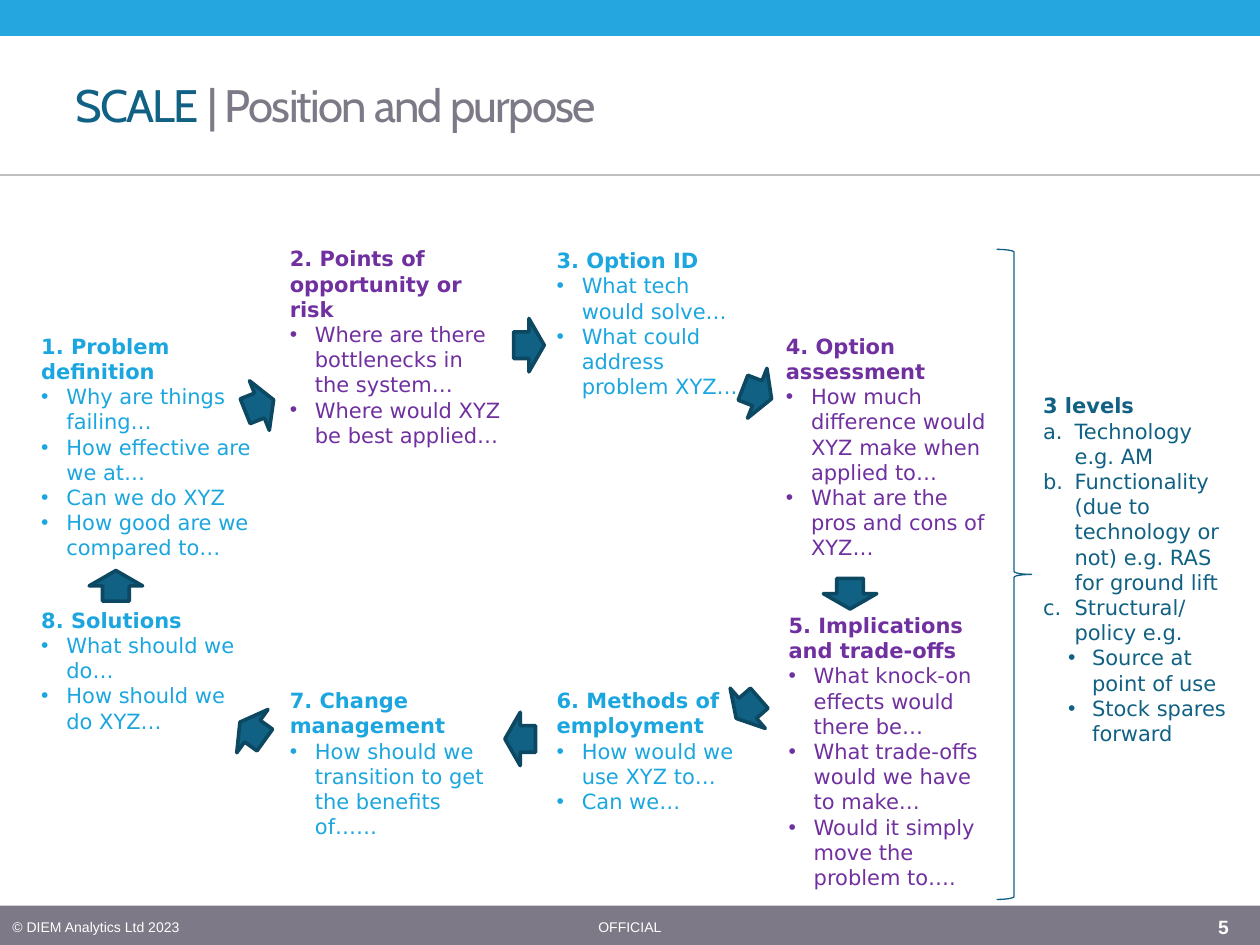
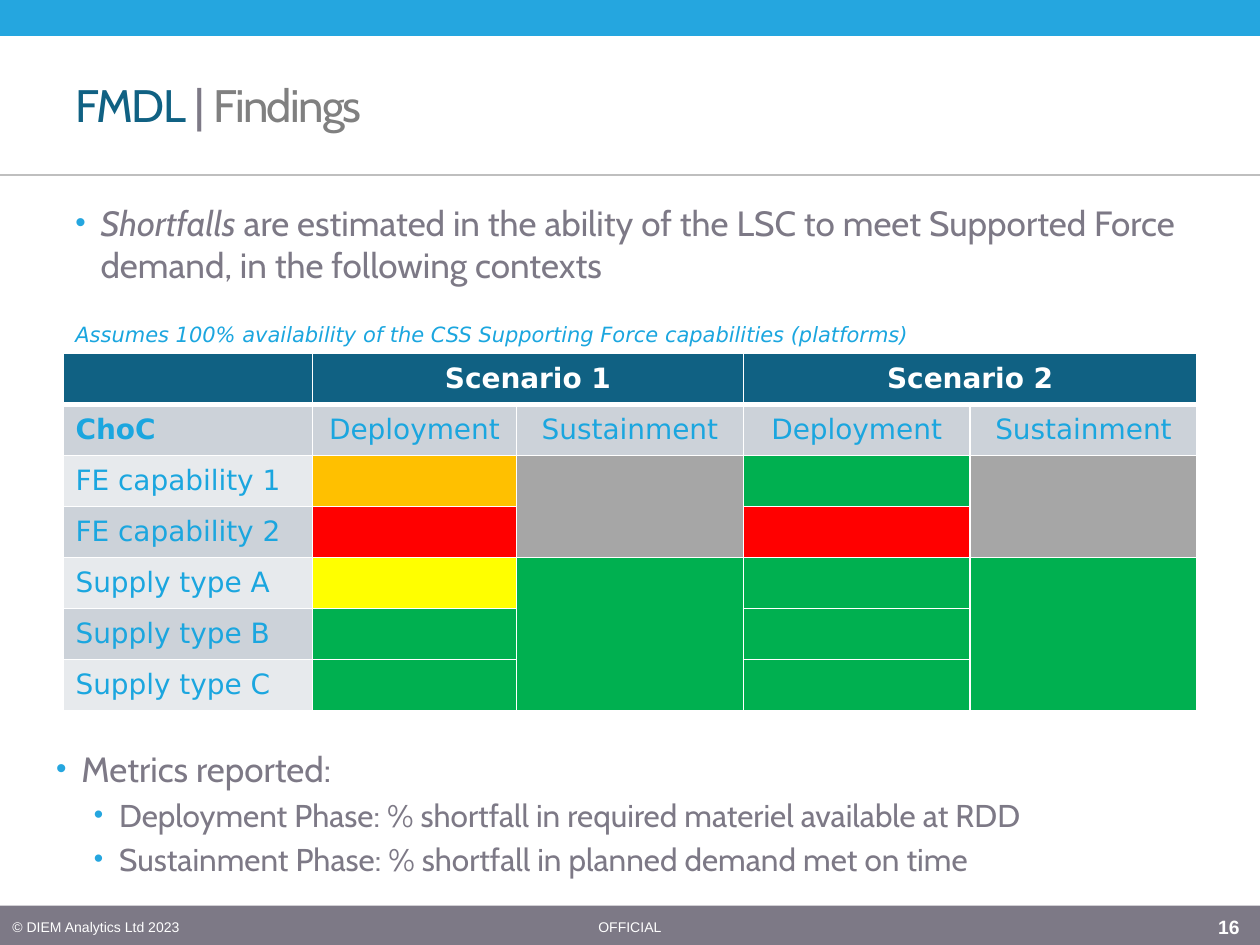
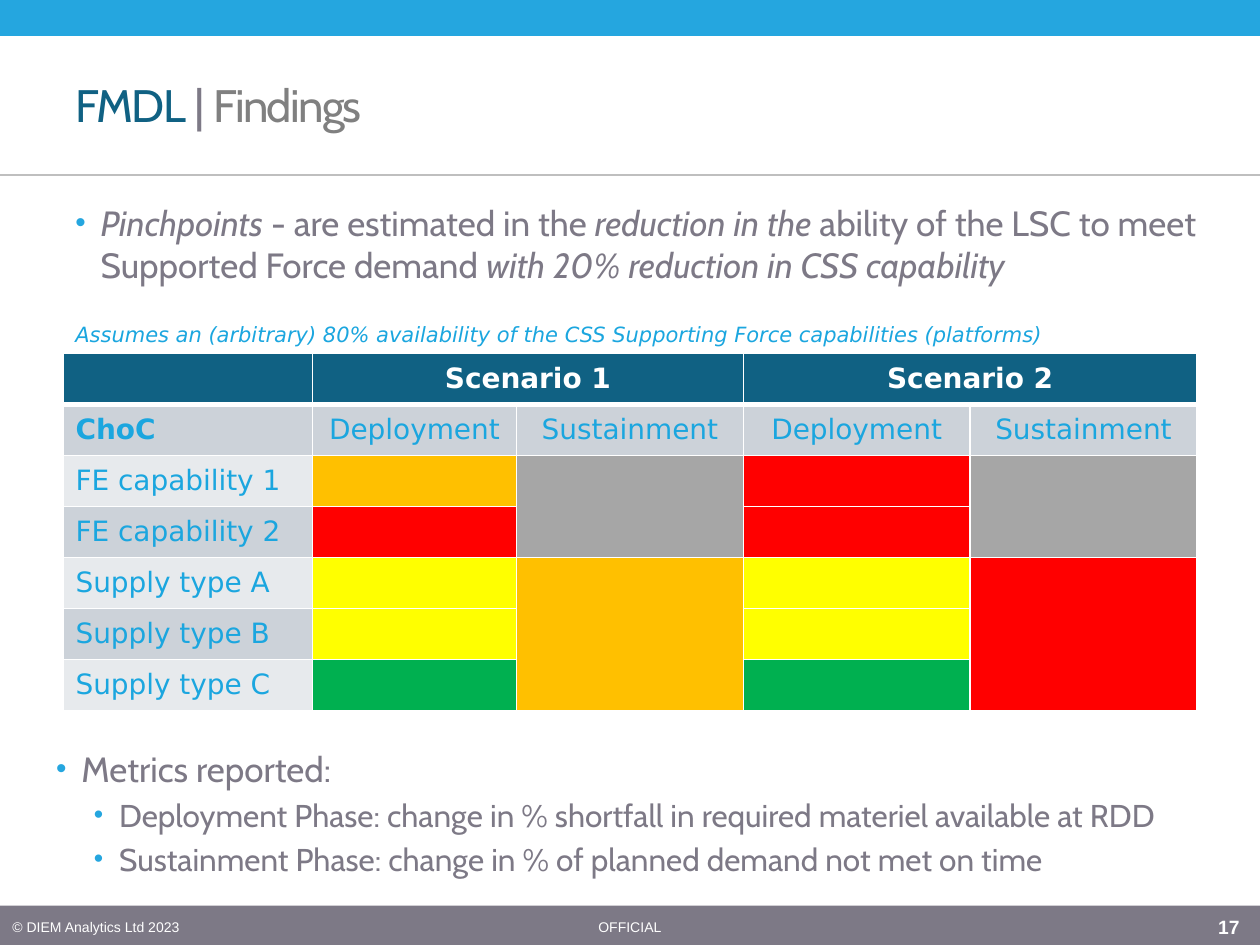
from dataclasses import dataclass

from lxml.etree import SubElement
from pptx import Presentation
from pptx.dml.color import RGBColor
from pptx.enum.shapes import MSO_CONNECTOR, MSO_SHAPE
from pptx.enum.text import MSO_ANCHOR, PP_ALIGN
from pptx.oxml.ns import qn
from pptx.util import Pt


@dataclass(frozen=True)
class Theme:
    band: RGBColor = RGBColor.from_string("25A6DF")
    sky: RGBColor = RGBColor.from_string("1BA6DF")
    teal: RGBColor = RGBColor.from_string("106183")
    teal_dark: RGBColor = RGBColor.from_string("0C4861")
    purple: RGBColor = RGBColor.from_string("7030A0")
    slate: RGBColor = RGBColor.from_string("7D7986")
    gray: RGBColor = RGBColor.from_string("808080")
    rule: RGBColor = RGBColor.from_string("BFBFBF")
    white: RGBColor = RGBColor.from_string("FFFFFF")
    row_dark: RGBColor = RGBColor.from_string("CCD2D9")
    row_light: RGBColor = RGBColor.from_string("E7EAED")
    heading_font: str = "Cabin"
    body_font: str = "DejaVu Sans"
    footer_font: str = "Arial"
    title_size: int = 26
    point_size: int = 20
    subpoint_size: int = 18
    table_size: int = 16
    note_size: int = 12
    number_size: int = 11
    footer_size: int = 8


theme = Theme()
RATINGS = {
    "G": RGBColor.from_string("00B050"),
    "Y": RGBColor.from_string("FFFF00"),
    "A": RGBColor.from_string("FFC000"),
    "R": RGBColor.from_string("FF0000"),
    "X": RGBColor.from_string("A6A6A6"),
}


def add_text(page, place, lines, font, size, color, anchor=MSO_ANCHOR.TOP):
    """Add a text box; each line is a list of the texts of its runs."""
    box = page.shapes.add_textbox(*[Pt(length) for length in place])
    frame = box.text_frame
    frame.word_wrap = True
    frame.vertical_anchor = anchor
    for index, line in enumerate(lines):
        para = frame.add_paragraph() if index else frame.paragraphs[0]
        for text in line:
            span = para.add_run()
            span.text = text
            span.font.name = font
            span.font.size = Pt(size)
            span.font.color.rgb = color
    return frame.paragraphs


def set_bullet(para, margin, hang, color=None, numbered=False):
    properties = para._p.get_or_add_pPr()
    properties.set("marL", str(Pt(margin)))
    properties.set("indent", str(-Pt(hang)))
    if color is not None:
        SubElement(SubElement(properties, qn("a:buClr")), qn("a:srgbClr"), val=str(color))
        SubElement(properties, qn("a:buSzPct"), val="85000")
    if numbered:
        SubElement(properties, qn("a:buFont"), typeface="+mj-lt")
        SubElement(properties, qn("a:buAutoNum"), type="alphaLcPeriod")
    else:
        SubElement(properties, qn("a:buFont"), typeface="Arial")
        SubElement(properties, qn("a:buChar"), char="•")


deck = Presentation()
deck.slide_width, deck.slide_height = Pt(720), Pt(540)

# Shared frame: bands, rule, footer, title
findings_title = [("FMDL ", theme.teal), ("| ", theme.slate), ("Findings", theme.gray)]
pages = []
for number, title in [
    ("5", [("SCALE", theme.teal), (" | Position and purpose", theme.slate)]),
    ("16", findings_title),
    ("17", findings_title),
]:
    page = deck.slides.add_slide(deck.slide_layouts[6])
    pages.append(page)
    for top, height, color in [(517.5, 22.5, theme.slate), (0, 20.5, theme.band)]:
        band = page.shapes.add_shape(MSO_SHAPE.RECTANGLE, 0, Pt(top), Pt(720), Pt(height))
        band.shadow.inherit = False
        band.fill.solid()
        band.fill.fore_color.rgb = color
        band.line.fill.background()
    rule = page.shapes.add_connector(MSO_CONNECTOR.STRAIGHT, 0, Pt(100), Pt(720), Pt(100))
    rule.line.color.rgb = theme.rule
    rule.line.width = Pt(0.75)
    SubElement(rule._element.spPr, qn("a:effectLst"))

    for left, width, text, size in [
        (0, 196, "© DIEM Analytics Ltd 2023", theme.footer_size),
        (262, 196, "OFFICIAL", theme.footer_size),
        (689, 31, number, theme.number_size),
    ]:
        para = add_text(page, (left, 519, width, 21), [[text]], theme.footer_font, size,
                        theme.white, MSO_ANCHOR.MIDDLE)[0]
        para.runs[0].font.bold = text == number
        if text == "OFFICIAL":
            para.alignment = PP_ALIGN.CENTER

    heading = add_text(page, (36, 26, 500, 67.5), [[text for text, color in title]],
                       theme.heading_font, theme.title_size, theme.slate, MSO_ANCHOR.MIDDLE)[0]
    for span, (text, color) in zip(heading.runs, title):
        span.font.color.rgb = color
        span._r.get_or_add_rPr().set("spc", "-100")

# Cycle of eight steps
cycle_page = pages[0]
for left, top, width, height, color, heading, questions in [
    (16.5, 187, 136, 138, theme.sky, "1. Problem definition",
     ["Why are things failing…", "How effective are we at…", "Can we do XYZ",
      "How good are we compared to…"]),
    (158.5, 137, 136, 124, theme.purple, "2. Points of opportunity or risk",
     ["Where are there bottlenecks in the system…", "Where would XYZ be best applied…"]),
    (311, 138, 122.5, 94, theme.sky, "3. Option ID",
     ["What tech would solve…", "What could address problem XYZ…"]),
    (442, 187, 136, 138, theme.purple, "4. Option assessment",
     ["How much difference would XYZ make when applied to…",
      "What are the pros and cons of XYZ…"]),
    (443.5, 346.5, 132, 167, theme.purple, "5. Implications and trade-offs",
     ["What knock-on effects would there be…", "What trade-offs would we have to make…",
      "Would it simply move the problem to…."]),
    (311, 389.5, 136, 80, theme.sky, "6. Methods of employment",
     ["How would we use XYZ to…", "Can we…"]),
    (158.5, 389.5, 136, 80, theme.sky, "7. Change management",
     ["How should we transition to get the benefits of……"]),
    (16.5, 343.5, 136, 80, theme.sky, "8. Solutions",
     ["What should we do…", "How should we do XYZ…"]),
]:
    lines = [[text] for text in [heading, *questions]]
    paras = add_text(cycle_page, (left, top, width, height), lines,
                     theme.body_font, theme.note_size, color)
    paras[0].runs[0].font.bold = True
    for para in paras[1:]:
        set_bullet(para, 14.4, 14.4)

# Arrows from step to step
for left, top, angle in [
    (139.5, 216.5, 338.2), (293.5, 182, 0), (424, 209.5, 21.2), (477, 324, 90),
    (418.5, 389.5, 138.8), (288.5, 407, 180), (135.5, 402.5, 215.8), (57.5, 319.5, 270),
]:
    arrow = cycle_page.shapes.add_shape(MSO_SHAPE.RIGHT_ARROW, Pt(left), Pt(top), Pt(17.5), Pt(30.5))
    arrow.rotation = angle
    arrow.shadow.inherit = False
    arrow.fill.solid()
    arrow.fill.fore_color.rgb = theme.teal
    arrow.line.color.rgb = theme.teal_dark
    arrow.line.width = Pt(2.08)

# Brace and levels
brace = cycle_page.shapes.add_shape(MSO_SHAPE.RIGHT_BRACE, Pt(569.5), Pt(142.5), Pt(20), Pt(371.5))
brace.shadow.inherit = False
brace.fill.background()
brace.line.color.rgb = theme.teal
brace.line.width = Pt(0.75)

levels = ["3 levels", "Technology e.g. AM",
          "Functionality (due to technology or not) e.g. RAS for ground lift",
          "Structural/ policy e.g.", "Source at point of use", "Stock spares forward"]
paras = add_text(cycle_page, (589, 221, 122.5, 211), [[text] for text in levels],
                 theme.body_font, theme.note_size, theme.teal)
paras[0].runs[0].font.bold = True
for para in paras[1:4]:
    set_bullet(para, 18, 18, numbered=True)
for para in paras[4:]:
    para.level = 1
    set_bullet(para, 28, 13.7)

# Findings: introduction, rated table, metrics
for page, intro, italics, note, ratings, metrics in [
    (pages[1],
     ["Shortfalls", " are estimated in the ability of the LSC to meet Supported Force demand, "
      "in the following contexts"], [0],
     "Assumes 100% availability of the CSS Supporting Force capabilities (platforms)",
     ["AXGX", "RXRX", "YGGG", "GGGG", "GGGG"],
     ["Metrics reported:",
      "Deployment Phase: % shortfall in required materiel available at RDD",
      "Sustainment Phase: % shortfall in planned demand met on time"]),
    (pages[2],
     ["Pinchpoints", " - are estimated in the ", "reduction in the",
      " ability of the LSC to meet Supported Force demand ",
      "with 20% reduction in CSS capability"], [0, 2, 4],
     "Assumes an (arbitrary) 80% availability of the CSS Supporting Force capabilities (platforms)",
     ["AXRX", "RXRX", "YAYR", "YAYR", "GAGR"],
     ["Metrics reported:",
      "Deployment Phase: change in % shortfall in required materiel available at RDD",
      "Sustainment Phase: change in % of planned demand not met on time"]),
]:
    para = add_text(page, (36, 111.5, 669.5, 70), [intro], theme.heading_font,
                    theme.point_size, theme.slate)[0]
    set_bullet(para, 14.4, 14.4, theme.band)
    for index in italics:
        para.runs[index].font.italic = True

    paras = add_text(page, (25, 423.5, 695, 90.5), [[text] for text in metrics],
                     theme.heading_font, theme.point_size, theme.slate)
    set_bullet(paras[0], 14.4, 14.4, theme.band)
    for para in paras[1:]:
        para.level = 1
        set_bullet(para, 36, 14.4, theme.band)
        para.space_before = Pt(3.6)
        para.runs[0].font.size = Pt(theme.subpoint_size)

    table = page.shapes.add_table(7, 5, Pt(36), Pt(201.8), Pt(648), Pt(204.4)).table
    table.first_row = table.horz_banding = False
    for column, width in zip(table.columns, [142.6, 116.6, 129.6, 129.6, 129.6]):
        column.width = Pt(width)
    for row in table.rows:
        row.height = Pt(29.2)
    rows = [["", "Scenario 1", "", "Scenario 2", ""],
            ["ChoC"] + ["Deployment", "Sustainment"] * 2]
    for label in ["FE capability 1", "FE capability 2",
                  "Supply type A", "Supply type B", "Supply type C"]:
        rows.append([label, "", "", "", ""])

    for r, row in enumerate(rows):
        for c, text in enumerate(row):
            cell = table.cell(r, c)
            properties = cell._tc.get_or_add_tcPr()
            for side in ["L", "R", "T", "B"]:
                heavy = (r, side) in [(0, "B"), (1, "T")]
                border = SubElement(properties, qn(f"a:ln{side}"), w=str(Pt(3 if heavy else 1)))
                SubElement(SubElement(border, qn("a:solidFill")), qn("a:srgbClr"),
                           val=str(theme.white))
            cell.fill.solid()
            if r == 0:
                color = theme.teal
            elif r > 1 and c > 0:
                color = RATINGS[ratings[r - 2][c - 1]]
            else:
                color = theme.row_dark if r % 2 else theme.row_light
            cell.fill.fore_color.rgb = color
            if text:
                cell.vertical_anchor = MSO_ANCHOR.MIDDLE
                para = cell.text_frame.paragraphs[0]
                para.text = text
                para.alignment = PP_ALIGN.CENTER if c else PP_ALIGN.LEFT
                font = para.runs[0].font
                font.name = theme.body_font
                font.size = Pt(theme.table_size)
                font.bold = r == 0 or text == "ChoC"
                font.color.rgb = theme.white if r == 0 else theme.sky

    # Scenario headings span two columns, sustainment ratings span their group of rows
    for c in [1, 3]:
        table.cell(0, c).merge(table.cell(0, c + 1))
        for first, last in [(2, 3), (4, 6)]:
            table.cell(first, c + 1).merge(table.cell(last, c + 1))

    para = add_text(page, (36, 180, 620, 21.6), [[note]], theme.body_font,
                    theme.note_size, theme.sky)[0]
    para.runs[0].font.italic = True

deck.save("out.pptx")
